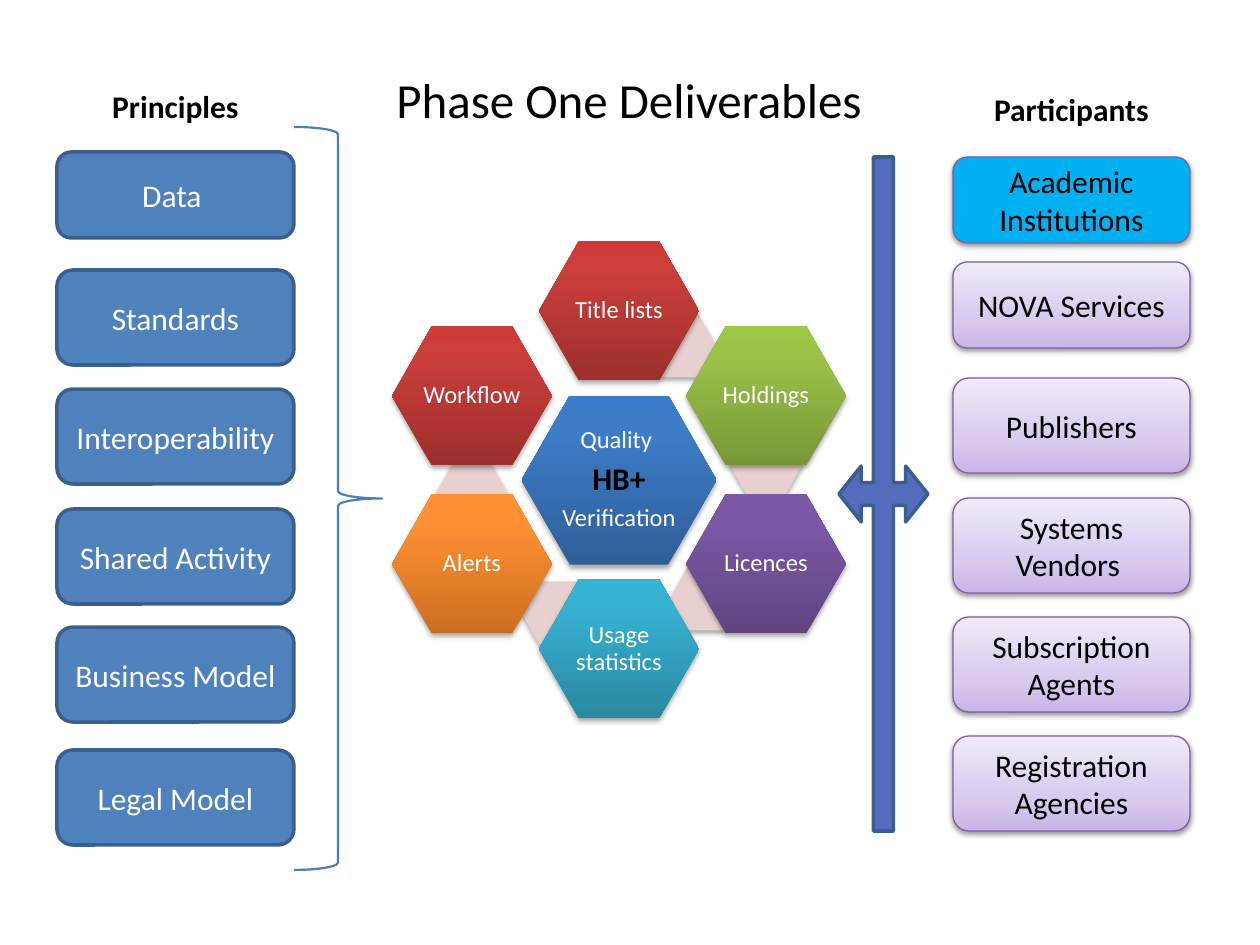
from dataclasses import dataclass

from lxml.etree import SubElement
from pptx import Presentation
from pptx.dml.color import RGBColor
from pptx.enum.shapes import MSO_SHAPE
from pptx.enum.text import MSO_ANCHOR, PP_ALIGN
from pptx.oxml.ns import qn
from pptx.util import Emu, Inches, Pt


@dataclass(frozen=True)
class Theme:
    font: str = "Calibri"
    title: int = 28
    body: int = 18
    small: int = 14
    black: str = "000000"
    white: str = "FFFFFF"
    blue: str = "4F81BD"
    edge: str = "3A5F8C"
    brace: str = "4B7EBC"
    arrow: str = "536CBB"
    tile: str = "E8D0D0"
    cyan: str = "00B0F0"
    violet: str = "7D60A0"
    # Gradients run from bottom to top: (percent, colour)
    lilac: tuple = ((0, "C9B5E8"), (35, "D8CBEE"), (100, "F0EAF9"))
    navy: tuple = ((0, "2F5F99"), (80, "3D7CC7"), (100, "3A7CCB"))
    red: tuple = ((0, "9C2F2D"), (80, "CB3E3A"), (100, "CE3B37"))
    green: tuple = ((0, "779737"), (80, "9BC348"), (100, "9DC746"))
    purple: tuple = ((0, "5F4480"), (80, "7B58A6"), (100, "7C57A8"))
    teal: tuple = ((0, "2A88A2"), (80, "37B1D2"), (100, "34B4D6"))
    orange: tuple = ((0, "CC6E20"), (80, "FF9034"), (100, "FF9136"))


T = Theme()
SCALE = 914400 / 126

MIDDLE = (619, 480)
CORE = (195, 169)
CELL = (160, 139)
TILE = (73, 63)
SIDE, FAR, NEAR = 147, 169, 84  # offsets of the ring from the middle

RING = [
    ("Title lists", T.red, 0, -FAR),
    ("Holdings", T.green, SIDE, -NEAR),
    ("Licences", T.purple, SIDE, NEAR),
    ("Usage statistics", T.teal, 0, FAR),
    ("Alerts", T.orange, -SIDE, NEAR),
    ("Workflow", T.red, -SIDE, -NEAR),
]
TILES = [(61, -134), (SIDE, -15), (87, 119), (-61, 133), (-SIDE, 14)]

BOX_W = 237
LEFT, RIGHT = 57, 953
PRINCIPLES = [
    ("Data ", 152, 86),
    ("Standards", 270, 95),
    ("Interoperability", 389, 95),
    ("Shared Activity", 509, 95),
    ("Business Model", 627, 95),
    ("Legal Model", 750, 95),
]
PARTICIPANTS = [
    ("Academic Institutions", 157, 86, T.cyan),
    ("NOVA Services", 262, 86, T.lilac),
    ("Publishers", 378, 95, T.lilac),
    ("Systems Vendors ", 498, 95, T.lilac),
    ("Subscription Agents", 617, 95, T.lilac),
    ("Registration Agencies", 736, 95, T.lilac),
]


def px(*values):
    return [Emu(round(v * SCALE)) for v in values]


def paint(shape, fill):
    """Fill with one colour, a gradient of stops, or nothing."""
    if fill is None:
        shape.fill.background()
    elif isinstance(fill, str):
        shape.fill.solid()
        shape.fill.fore_color.rgb = RGBColor.from_string(fill)
    else:
        shape.fill.gradient()
        shape.fill.gradient_angle = 90
        stops = shape._element.spPr.find(".//" + qn("a:gsLst"))
        for old in list(stops):
            stops.remove(old)
        for spot, tone in fill:
            stop = SubElement(stops, qn("a:gs"), pos=str(spot * 1000))
            SubElement(stop, qn("a:srgbClr"), val=tone)


def shade(shape, alpha, dist):
    """Drop a soft black shadow downwards; alpha in percent, dist in points."""
    effects = shape._element.spPr.find(qn("a:effectLst"))
    outer = SubElement(effects, qn("a:outerShdw"), blurRad=str(Pt(3.1)),
                       dist=str(Pt(dist)), dir="5400000", rotWithShape="0")
    tone = SubElement(outer, qn("a:srgbClr"), val=T.black)
    SubElement(tone, qn("a:alpha"), val=str(alpha * 1000))


def draw(slide, kind, box, fill, line=None, width=0, adjust=()):
    shape = slide.shapes.add_shape(kind, *px(*box))
    shape.shadow.inherit = False
    for i, value in enumerate(adjust):
        shape.adjustments[i] = value
    paint(shape, fill)
    if line:
        shape.line.color.rgb = RGBColor.from_string(line)
        shape.line.width = Pt(width)
    else:
        shape.line.fill.background()
    return shape


def style(para, size, color, bold=False):
    para.alignment = PP_ALIGN.CENTER
    font = para.font
    font.name, font.size, font.bold = T.font, Pt(size), bold
    font.color.rgb = RGBColor.from_string(color)


def label(slide, text, box, size, bold=False):
    frame = slide.shapes.add_textbox(*px(*box)).text_frame
    frame.word_wrap = True
    frame.text = text
    style(frame.paragraphs[0], size, T.black, bold)


def card(slide, text, box, fill, line, width, color):
    shape = draw(slide, MSO_SHAPE.ROUNDED_RECTANGLE, box, fill, line, width)
    shape.text_frame.text = text
    style(shape.text_frame.paragraphs[0], T.body, color)
    return shape


def hexagon(slide, size, fill, dx=0, dy=0, lines=()):
    """Place a hexagon by the offset of its centre from the middle."""
    wide, high = size
    box = (MIDDLE[0] + dx - wide / 2, MIDDLE[1] + dy - high / 2, wide, high)
    shape = draw(slide, MSO_SHAPE.HEXAGON, box, fill, adjust=(0.286, 1.155))
    shade(shape, 35, 1.8)
    frame = shape.text_frame
    frame.vertical_anchor = MSO_ANCHOR.MIDDLE
    frame.margin_left = frame.margin_right = Inches(0.02)
    frame.margin_top = frame.margin_bottom = Inches(0.02)
    if lines:
        frame.text = "\n".join(lines)
        for para in frame.paragraphs:
            style(para, T.small, T.white)
            para.line_spacing = 0.9
            para.space_after = Pt(5)
    return frame


def honeycomb(slide):
    core = hexagon(slide, CORE, T.navy,
                   lines=("Quality ", "HB+", "Verification"))
    style(core.paragraphs[1], T.body, T.black, bold=True)
    for dx, dy in TILES:
        hexagon(slide, TILE, T.tile, dx, dy)
    for name, fill, dx, dy in RING:
        hexagon(slide, CELL, fill, dx, dy, [name])


def main():
    deck = Presentation()
    deck.slide_width, deck.slide_height = Inches(10), Inches(7.5)
    slide = deck.slides.add_slide(deck.slide_layouts[6])

    honeycomb(slide)
    label(slide, "Phase One Deliverables", (353, 63, 552, 72), T.title)
    for name, top, high in PRINCIPLES:
        card(slide, name, (LEFT, top, BOX_W, high), T.blue, T.edge, 2, T.white)
    draw(slide, MSO_SHAPE.RIGHT_BRACE, (294, 127, 88, 743), None,
         T.brace, 1.25)
    draw(slide, MSO_SHAPE.LEFT_RIGHT_ARROW_CALLOUT, (839, 157, 89, 674),
         T.arrow, T.edge, 2, (0.258, 0.314, 0.25, 0.223))
    label(slide, "Principles", (LEFT, 81, BOX_W, 52), T.body, bold=True)
    label(slide, "Participants", (RIGHT, 84, BOX_W, 52), T.body, bold=True)
    for name, top, high, fill in PARTICIPANTS:
        box = (RIGHT, top, BOX_W, high)
        shade(card(slide, name, box, fill, T.violet, 0.75, T.black), 38, 1.6)

    deck.save("out.pptx")


if __name__ == "__main__":
    main()
